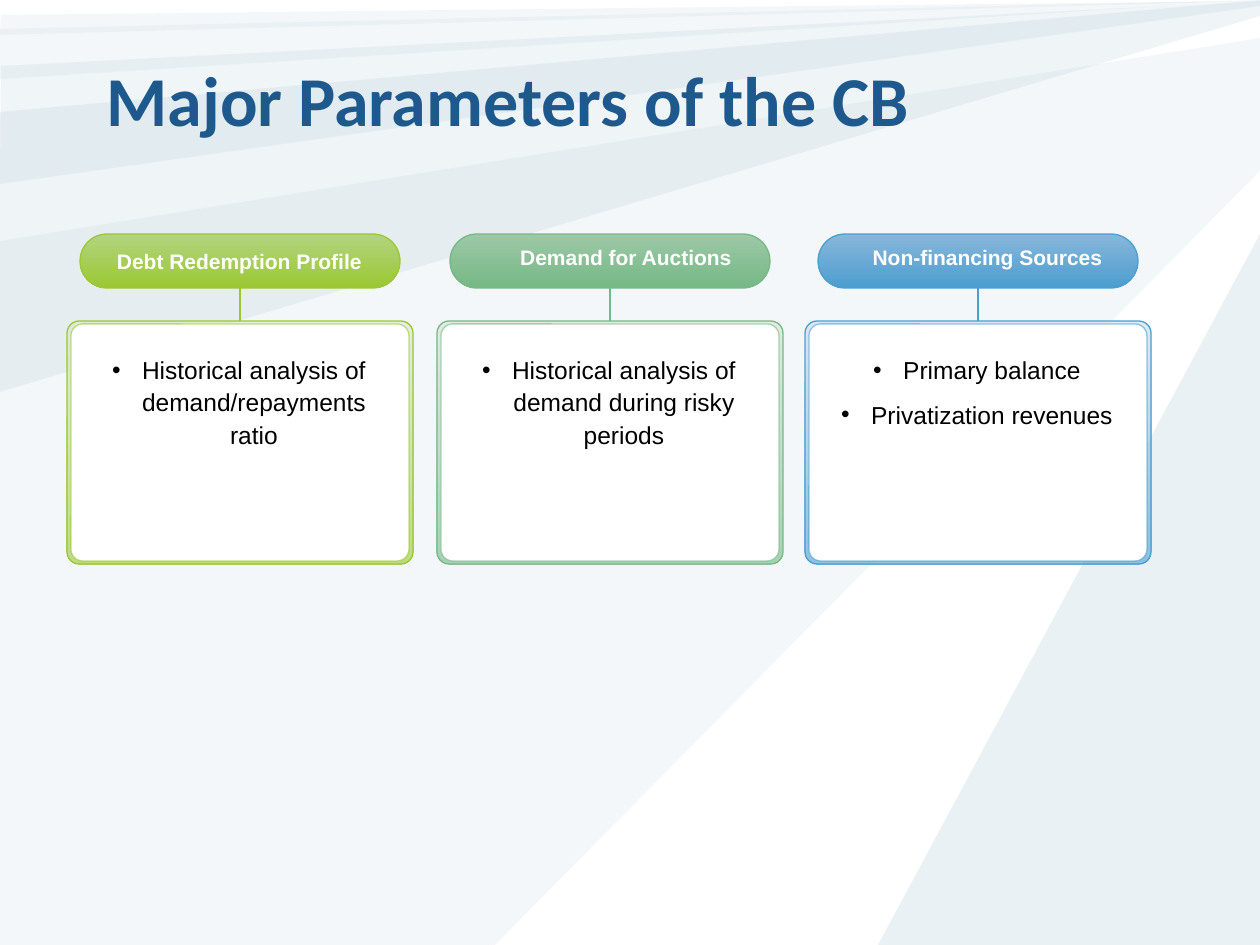
from dataclasses import dataclass

from pptx import Presentation
from pptx import util as u
from pptx.dml.color import RGBColor
from pptx.enum import shapes, text
from pptx.oxml.ns import qn
from lxml import etree

PX = 914400 / 126


@dataclass(frozen=True)
class Theme:
    """Colours, fonts and type sizes of the slide."""
    ray: str = "97BAC9"
    title: str = "1E598E"
    white: str = "FFFFFF"
    black: str = "000000"
    head: str = "Calibri"
    body: str = "Arial"
    big: int = 40
    label: int = 12
    item: int = 14


T = Theme()

RAYS = [
    (10, [(1260, 38), (0, 241), (0, 945), (495, 945), (1260, 171)]),
    (20, [(1260, 234), (878, 945), (1260, 945)]),
    (10, [(1, 15), (0, 35), (1260, 1)]),
    (10, [(1259, 0), (0, 79), (0, 29)]),
    (15, [(1260, 16), (0, 392), (0, 112), (1260, 0)]),
    (14, [(1260, 1), (1, 66), (0, 184), (1260, 6)]),
]

CARDS = [
    (67, "9AC832", "B3D481", "DBE9C8", "Debt Redemption Profile", (103, 242, 273),
     ["Historical analysis of demand/repayments ratio"]),
    (437, "76B886", "9DC8A6", "D2E4D5", "Demand for Auctions", (490, 238, 272),
     ["Historical analysis of demand during risky periods"]),
    (805, "4C9ED0", "89B6DA", "CBDCEC", "Non-financing Sources", (859, 238, 257),
     ["Primary balance", "Privatization revenues"]),
]


def px(*vals):
    """Turn px lengths into EMU."""
    return [u.Emu(round(v * PX)) for v in vals]


def rgb(code):
    """Turn a hex code into a colour."""
    return RGBColor.from_string(code)


def fade(node, pct):
    """Set the opacity of every colour below a node."""
    for clr in node.iter(qn("a:srgbClr")):
        etree.SubElement(clr, qn("a:alpha")).set("val", str(pct * 1000))


def style(par, size, color, name=T.body, bold=False):
    """Set the font of a paragraph."""
    font = par.font
    font.size, font.name, font.bold = u.Pt(size), name, bold
    font.color.rgb = rgb(color)


def ray(slide, pct, pts):
    """Draw one translucent background ray."""
    form = slide.shapes.build_freeform(*pts[0], scale=PX)
    form.add_line_segments(pts[1:], close=True)
    shape = form.convert_to_shape()
    shape.shadow.inherit = False
    shape.fill.solid()
    shape.fill.fore_color.rgb = rgb(T.ray)
    shape.line.fill.background()
    fade(shape.element.spPr, pct)


def title(slide, words):
    """Place and format the title placeholder above the rays."""
    shape = slide.shapes.title
    slide.shapes.element.append(shape.element)
    shape.left, shape.top, shape.width, shape.height = px(94, 32, 935, 132)
    frame = shape.text_frame
    frame.text = words
    frame.auto_size = text.MSO_AUTO_SIZE.NONE
    frame.vertical_anchor = text.MSO_ANCHOR.MIDDLE
    par = frame.paragraphs[0]
    par.alignment = text.PP_ALIGN.LEFT
    style(par, T.big, T.title, T.head, True)


def panel(slide, box, round_by, line, fills):
    """Draw a rounded box with a plain or a two-stop fill."""
    shape = slide.shapes.add_shape(shapes.MSO_SHAPE.ROUNDED_RECTANGLE, *px(*box))
    shape.shadow.inherit = False
    shape.adjustments[0] = round_by
    if len(fills) == 1:
        shape.fill.solid()
        shape.fill.fore_color.rgb = rgb(fills[0])
    else:
        shape.fill.gradient()
        shape.fill.gradient_angle = 270
        for stop, code in zip(shape.fill.gradient_stops, fills):
            stop.color.rgb = rgb(code)
    shape.line.color.rgb = rgb(line)
    shape.line.width = u.Pt(0.75)
    return shape


def box(slide, area, lines):
    """Add a wrapping text box with centred lines and give its paragraphs."""
    frame = slide.shapes.add_textbox(*px(*area)).text_frame
    frame.word_wrap = True
    frame.text = "\n".join(lines)
    for par in frame.paragraphs:
        par.alignment = text.PP_ALIGN.CENTER
    return frame.paragraphs


def bullets(slide, area, lines):
    """Add a centred bullet list."""
    for par in box(slide, area, lines):
        style(par, T.item, T.black)
        par.line_spacing = 1.1
        par.space_before = u.Pt(7)
        props = par._p.get_or_add_pPr()
        props.set("marL", str(px(30)[0]))
        props.set("indent", str(px(-30)[0]))
        etree.SubElement(props, qn("a:buFont")).set("typeface", T.body)
        etree.SubElement(props, qn("a:buChar")).set("char", "•")
        for run in props.findall(qn("a:defRPr")):
            props.append(run)


def link(slide, head, body, color):
    """Join a pill to the panel below it."""
    line = slide.shapes.add_connector(shapes.MSO_CONNECTOR.STRAIGHT, 0, 0, 0, 0)
    line.begin_connect(head, 2)
    line.end_connect(body, 0)
    line.line.color.rgb = rgb(color)
    line.line.width = u.Pt(1.5)
    etree.SubElement(line.element.spPr, qn("a:effectLst"))


def card(slide, left, main_clr, mid, pale, label, spot, items):
    """Draw one column: panel, pill, label, list and link."""
    outer = panel(slide, (left, 321, 346, 243), 0.05, main_clr, (pale, main_clr))
    fade(outer.element.spPr.find(qn("a:gradFill")), 60)
    inner = panel(slide, (left + 4, 324, 338, 237), 0.05, main_clr, (T.white,))
    fade(inner.element.spPr.find(qn("a:ln")), 60)
    pill = panel(slide, (left + 13, 234, 320, 54), 0.5, main_clr, (mid, main_clr))
    x, y, wide = spot
    style(box(slide, (x, y, wide, 38), [label])[0], T.label, T.white, bold=True)
    bullets(slide, (left + 17, 346, 310, 140), items)
    link(slide, pill, outer, main_clr)


def main():
    """Build and save the slide."""
    deck = Presentation()
    deck.slide_width, deck.slide_height = px(1260, 945)
    slide = deck.slides.add_slide(deck.slide_layouts[5])
    for pct, pts in RAYS:
        ray(slide, pct, pts)
    title(slide, "Major Parameters of the CB")
    for spec_row in CARDS:
        card(slide, *spec_row)
    deck.save("out.pptx")


if __name__ == "__main__":
    main()
